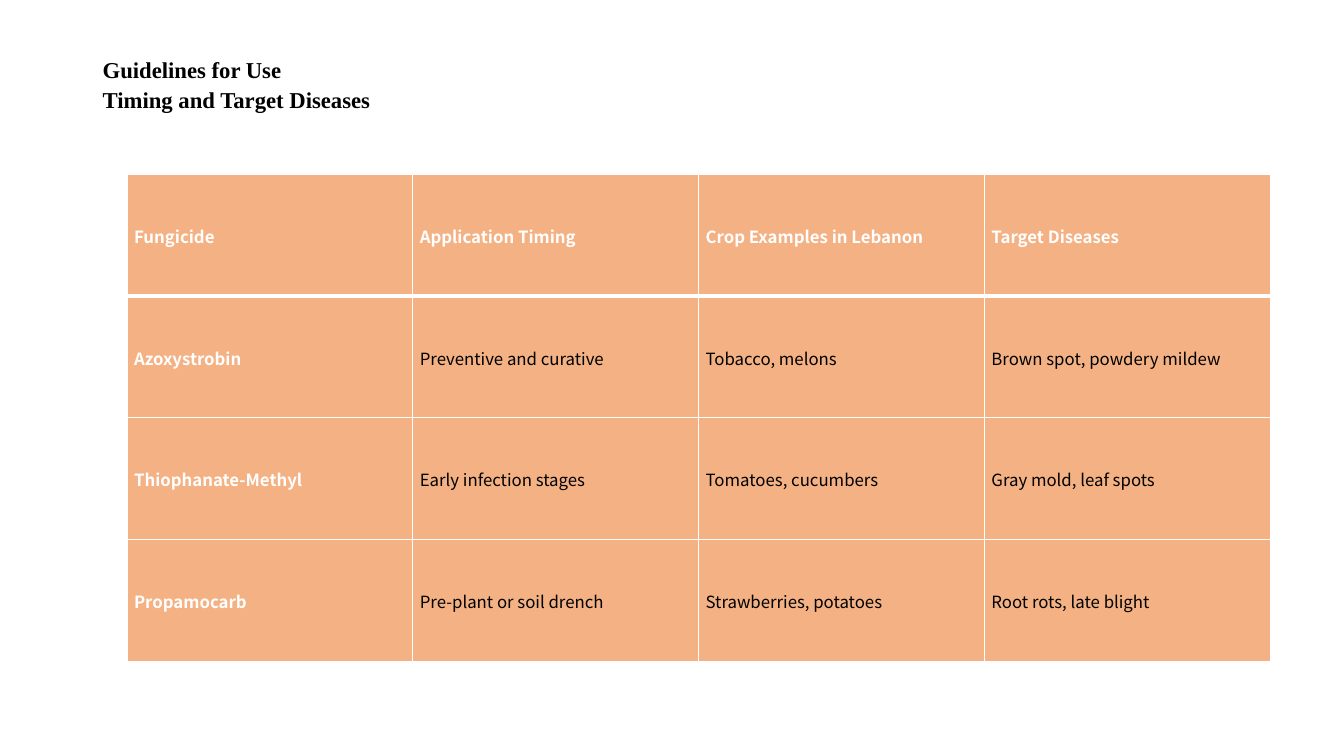
from lxml import etree
from pptx import Presentation
from pptx.dml.color import RGBColor
from pptx.enum.text import MSO_ANCHOR
from pptx.oxml.ns import qn
from pptx.util import Inches, Pt

MIDDLE = MSO_ANCHOR.MIDDLE
TOP = MSO_ANCHOR.TOP
HEADING_FONT = "Times New Roman"
TABLE_FONT = "Noto Sans CJK SC"
WHITE, BLACK, ORANGE = "FFFFFF", "000000", "F4B183"

HEADING = "Guidelines for Use\vTiming and Target Diseases"
FUNGICIDES = [
    ("Fungicide", "Application Timing", "Crop Examples in Lebanon", "Target Diseases"),
    ("Azoxystrobin", "Preventive and curative", "Tobacco, melons", "Brown spot, powdery mildew"),
    ("Thiophanate-Methyl", "Early infection stages", "Tomatoes, cucumbers", "Gray mold, leaf spots"),
    ("Propamocarb", "Pre-plant or soil drench", "Strawberries, potatoes", "Root rots, late blight"),
]


def rgb(value):
    return RGBColor.from_string(value)


def style_paragraph(paragraph, font_name, size, color, bold, line_spacing):
    paragraph.line_spacing = line_spacing
    paragraph.space_after = Pt(8)
    font = paragraph.font
    font.name = font_name
    font.size = Pt(size)
    font.bold = bold
    font.color.rgb = rgb(color)


def set_borders(cell, widths):
    """Draw white cell borders; widths maps a side (L, R, T, B) to points."""
    properties = cell._tc.get_or_add_tcPr()
    for index, (side, width) in enumerate(widths.items()):
        line = etree.Element(qn(f"a:ln{side}"), w=str(Pt(width)))
        fill = etree.SubElement(line, qn("a:solidFill"))
        etree.SubElement(fill, qn("a:srgbClr"), val=WHITE)
        properties.insert(index, line)


def add_heading(slide, left, top, width, height):
    heading = slide.shapes.add_textbox(left, top, width, height).text_frame
    heading.word_wrap = True
    heading.vertical_anchor = TOP
    heading.margin_top = Inches(0.12)
    heading.text = HEADING
    style_paragraph(heading.paragraphs[0], HEADING_FONT, 16.2, BLACK, True, 1.11)


def fill_cell(cell, text, is_header, is_label):
    cell.text = text
    cell.vertical_anchor = MIDDLE
    cell.margin_left = cell.margin_right = Inches(0.07)
    cell.margin_top = cell.margin_bottom = 0
    cell.fill.solid()
    cell.fill.fore_color.rgb = rgb(ORANGE)
    color = WHITE if is_label else BLACK
    style_paragraph(cell.text_frame.paragraphs[0], TABLE_FONT, 12, color, is_label, 1.07)


def add_fungicide_table(slide, left, top, width, height):
    row_count, column_count = len(FUNGICIDES), len(FUNGICIDES[0])
    table = slide.shapes.add_table(row_count, column_count, left, top, width, height).table
    for r, entries in enumerate(FUNGICIDES):
        for c, text in enumerate(entries):
            cell = table.cell(r, c)
            fill_cell(cell, text, r == 0, r == 0 or c == 0)
            set_borders(cell, {"L": 1, "R": 1,
                               "T": 3 if r == 1 else 1,
                               "B": 3 if r == 0 else 1})


def main():
    presentation = Presentation()
    presentation.slide_width = Inches(13.33)
    presentation.slide_height = Inches(7.5)
    slide = presentation.slides.add_slide(presentation.slide_layouts[6])
    add_heading(slide, Inches(0.92), Inches(0.4), Inches(11.5), Inches(1.45))
    add_fungicide_table(slide, Inches(1.26), Inches(1.73), Inches(11.34), Inches(4.83))
    presentation.save("out.pptx")


if __name__ == "__main__":
    main()
